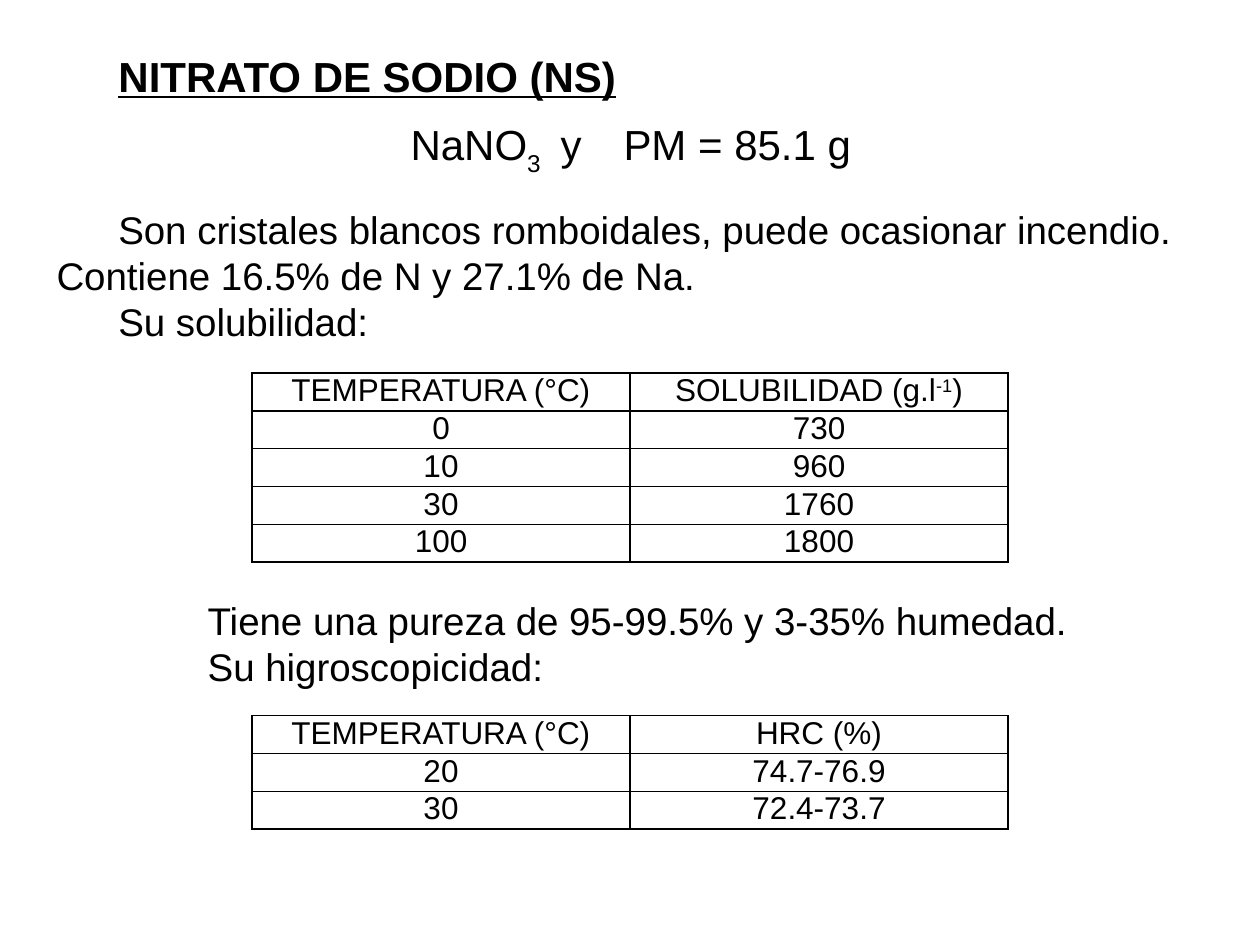
from lxml.etree import SubElement as Sub
from pptx import Presentation
from pptx.dml.color import RGBColor
from pptx.enum.text import MSO_ANCHOR as Anchor, PP_ALIGN as Align
from pptx.oxml.ns import qn
from pptx.util import Inches, Pt

INK = "000000"


def paint(fill, color):
    fill.solid()
    fill.fore_color.rgb = RGBColor.from_string(color)


def write(para, parts, size, bold=False):
    """Add runs; a part is plain text or a (text, baseline percent) pair."""
    for part in [parts] if isinstance(parts, str) else parts:
        text, base = (part, 0) if isinstance(part, str) else part
        run = para.add_run()
        run.text = text
        font = run.font
        font.name, font.size = "Arial", Pt(size)
        font.bold = font.underline = bold
        paint(font.fill, INK)
        if base:
            font._element.set("baseline", str(base * 1000))


def indent(para, first, tabs=()):
    """Set the first-line indent and left tab stops, in inches."""
    props = para._p.get_or_add_pPr()
    props.set("marL", "0")
    props.set("indent", str(Inches(first)))
    if tabs:
        stops = Sub(props, qn("a:tabLst"))
        for pos in tabs:
            Sub(stops, qn("a:tab"), pos=str(Inches(pos)), algn="l")


def add_title(slide, text, left, top, width, height):
    title = slide.shapes.title
    title.left, title.top = Inches(left), Inches(top)
    title.width, title.height = Inches(width), Inches(height)
    frame = title.text_frame
    frame.vertical_anchor = Anchor.TOP
    para = frame.paragraphs[0]
    para.alignment = Align.LEFT
    write(para, text, 24, bold=True)
    indent(para, 0.49)


def add_text(slide, left, top, width, height, lines):
    """Add a text box; a line is (parts, size, indent, space before, tabs)."""
    box = slide.shapes.add_textbox(
        Inches(left), Inches(top), Inches(width), Inches(height))
    frame = box.text_frame
    frame.word_wrap = True
    for i, (parts, size, first, gap, tabs) in enumerate(lines):
        para = frame.add_paragraph() if i else frame.paragraphs[0]
        para.space_before = Pt(gap)
        write(para, parts, size)
        indent(para, first, tabs)


def frame_cell(cell):
    props = cell._tc.get_or_add_tcPr()
    for i, side in enumerate(("lnL", "lnR", "lnT", "lnB")):
        line = props.makeelement(qn(f"a:{side}"), {"w": str(Pt(1))})
        fill = Sub(line, qn("a:solidFill"))
        Sub(fill, qn("a:srgbClr"), val=INK)
        props.insert(i, line)


def add_grid(slide, top, rows):
    shape = slide.shapes.add_table(
        len(rows), 2, Inches(2), Inches(top), Inches(6), Inches(0.3 * len(rows)))
    table = shape.table
    table.first_row = table.horz_banding = False
    for r, row in enumerate(rows):
        for c, parts in enumerate(row):
            cell = table.cell(r, c)
            cell.margin_left = cell.margin_right = Inches(0.07)
            cell.margin_top = cell.margin_bottom = 0
            cell.fill.background()
            frame_cell(cell)
            para = cell.text_frame.paragraphs[0]
            para.alignment = Align.CENTER
            write(para, parts, 18)


def main():
    deck = Presentation()
    deck.slide_width, deck.slide_height = Inches(10), Inches(7.5)
    slide = deck.slides.add_slide(deck.slide_layouts[5])
    paint(slide.background.fill, "FFFFFF")

    add_title(slide, "NITRATO DE SODIO (NS)", 0.35, 0.35, 9.29, 0.48)
    add_text(slide, 0.35, 0.89, 9.29, 1.95, [
        (["NaNO", ("3", -30), "\ty\tPM = 85.1 g"], 24, 2.81, 0, (4.22, 4.84)),
        ("Son cristales blancos romboidales, puede ocasionar incendio. "
         "Contiene 16.5% de N y 27.1% de Na.", 22, 0.49, 16, ()),
        ("Su solubilidad:", 22, 0.49, 0, ()),
    ])
    heat = "TEMPERATURA (°C)"
    add_grid(slide, 2.96, [
        (heat, ["SOLUBILIDAD (g.l", ("-1", 30), ")"]),
        ("0", "730"),
        ("10", "960"),
        ("30", "1760"),
        ("100", "1800"),
    ])
    add_text(slide, 1.06, 4.69, 7.95, 0.84, [
        ("Tiene una pureza de 95-99.5% y 3-35% humedad.", 22, 0.49, 0, ()),
        ("Su higroscopicidad:", 22, 0.49, 0, ()),
    ])
    add_grid(slide, 5.68, [
        (heat, "HRC (%)"),
        ("20", "74.7-76.9"),
        ("30", "72.4-73.7"),
    ])
    deck.save("out.pptx")


if __name__ == "__main__":
    main()
